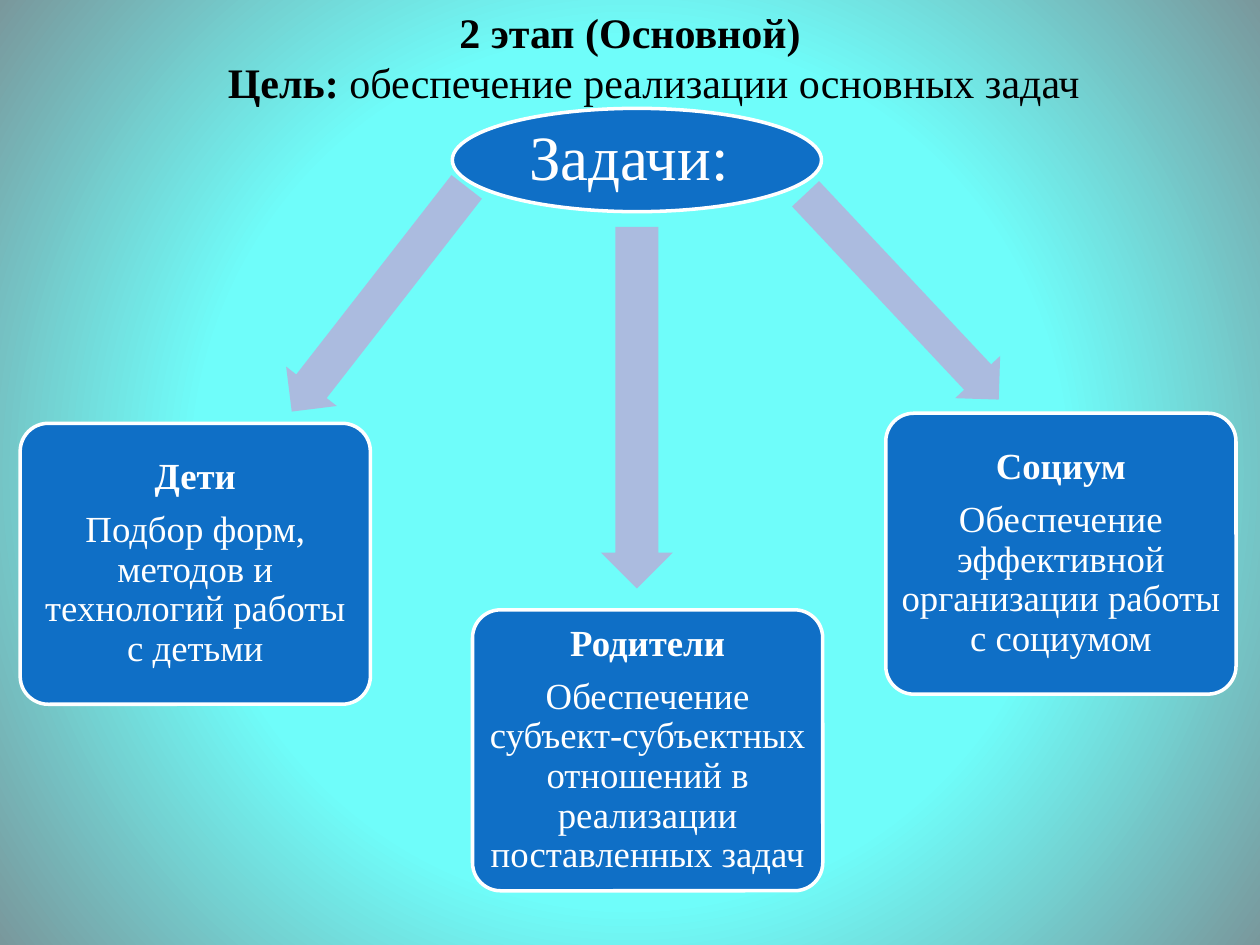
from lxml import etree
from pptx import Presentation
from pptx.dml.color import RGBColor
from pptx.enum.shapes import MSO_SHAPE
from pptx.enum.text import MSO_ANCHOR, MSO_AUTO_SIZE, PP_ALIGN
from pptx.oxml.ns import qn
from pptx.util import Inches, Pt

ELLIPSE = MSO_SHAPE.OVAL
CARD = MSO_SHAPE.ROUNDED_RECTANGLE
ARROW = MSO_SHAPE.LEFT_ARROW
CENTER = PP_ALIGN.CENTER
MIDDLE = MSO_ANCHOR.MIDDLE
TOP = MSO_ANCHOR.TOP
NO_FIT = MSO_AUTO_SIZE.NONE

WIDTH, HEIGHT = Inches(10), Inches(7.5)
COLUMNS, ROWS = 100, 75
FONT = "Times New Roman"
BLUE, LILAC, WHITE, BLACK = "0F6FC6", "ABBBDF", "FFFFFF", "000000"
GLOW, EDGE = "6FFDFA", "79989C"
CARD_SIZE = (27.8, 22.3)

CARDS = [
    (1.6, 33.6, "Дети", "Подбор форм, методов и технологий работы с детьми"),
    (37.5, 48.4, "Родители",
     "Обеспечение субъект-субъектных отношений в реализации поставленных задач"),
    (70.3, 32.8, "Социум", "Обеспечение эффективной организации работы с социумом"),
]
ARROWS = [
    (18.8, 21.2, 22.6, 5.1, 307.9),
    (36.2, 29.5, 28.7, 5.7, 270),
    (60.4, 21.1, 22.4, 4.9, 226.8),
]


def color(value):
    return RGBColor.from_string(value)


def cell_box(left, top, width, height):
    column, row = WIDTH / COLUMNS, HEIGHT / ROWS
    return [round(n) for n in (left * column, top * row, width * column, height * row)]


def paint_background(slide):
    fill = slide.background.fill
    fill.gradient()
    for stop, position, value in zip(fill.gradient_stops, (0.55, 1), (GLOW, EDGE)):
        stop.position = position
        stop.color.rgb = color(value)
    gradient = slide.background._cSld.find(".//" + qn("a:gradFill"))
    circle = etree.Element(qn("a:path"), path="circle")
    etree.SubElement(circle, qn("a:fillToRect"), l="50000", t="50000", r="50000", b="50000")
    gradient.replace(gradient.find(qn("a:lin")), circle)


def add_run(paragraph, text, size, value, bold=False):
    run = paragraph.add_run()
    run.text = text
    run.font.name = FONT
    run.font.size = Pt(size)
    run.font.bold = bold
    run.font.color.rgb = color(value)


def write_heading(slide):
    title = slide.shapes.title
    title.element.getparent().remove(title.element)
    body = slide.placeholders[1]
    body.left, body.top, body.width, body.height = 0, 0, WIDTH, HEIGHT
    frame = body.text_frame
    frame.auto_size = NO_FIT
    frame.vertical_anchor = TOP
    paragraph = frame.paragraphs[0]
    paragraph.alignment = CENTER
    properties = paragraph._p.get_or_add_pPr()
    properties.set("marL", str(Inches(0.38)))
    properties.set("indent", str(-Inches(0.38)))
    etree.SubElement(properties, qn("a:buNone"))
    add_run(paragraph, "2 этап (Основной)", 24, BLACK, bold=True)
    paragraph.add_line_break()
    add_run(paragraph, "Цель: ", 24, BLACK, bold=True)
    add_run(paragraph, "обеспечение реализации основных задач", 24, BLACK)


def add_plain_shape(slide, kind, box, fill):
    shape = slide.shapes.add_shape(kind, *cell_box(*box))
    shape.shadow.inherit = False
    shape.fill.solid()
    shape.fill.fore_color.rgb = color(fill)
    shape.line.fill.background()
    return shape


def add_node(slide, kind, box, lines, size, inset):
    shape = add_plain_shape(slide, kind, box, BLUE)
    shape.line.color.rgb = color(WHITE)
    shape.line.width = Pt(2)
    frame = shape.text_frame
    frame.word_wrap = True
    frame.vertical_anchor = MIDDLE
    frame.margin_left = frame.margin_right = Inches(inset)
    frame.margin_top = frame.margin_bottom = Inches(inset)
    for index, (text, bold) in enumerate(lines):
        paragraph = frame.add_paragraph() if index else frame.paragraphs[0]
        paragraph.alignment = CENTER
        paragraph.line_spacing = 0.9
        paragraph.space_after = Pt(size * 0.35)
        add_run(paragraph, text, size, WHITE, bold)
    return shape


def add_card(slide, left, top, heading, task):
    lines = [(heading, True), (task, False)]
    card = add_node(slide, CARD, (left, top, *CARD_SIZE), lines, 21, 0.04)
    card.adjustments[0] = 0.1


def add_arrow(slide, left, top, width, height, rotation):
    arrow = add_plain_shape(slide, ARROW, (left, top, width, height), LILAC)
    arrow.rotation = rotation
    arrow.adjustments[0] = 0.6
    arrow.adjustments[1] = 0.5


def main():
    presentation = Presentation()
    presentation.slide_width, presentation.slide_height = WIDTH, HEIGHT
    slide = presentation.slides.add_slide(presentation.slide_layouts[1])
    paint_background(slide)
    write_heading(slide)
    add_node(slide, ELLIPSE, (35.9, 8.6, 29.3, 8.2), [("Задачи: ", False)], 36, 0.03)
    for arrow, card in zip(ARROWS, CARDS):
        add_arrow(slide, *arrow)
        add_card(slide, *card)
    presentation.save("out.pptx")


if __name__ == "__main__":
    main()
